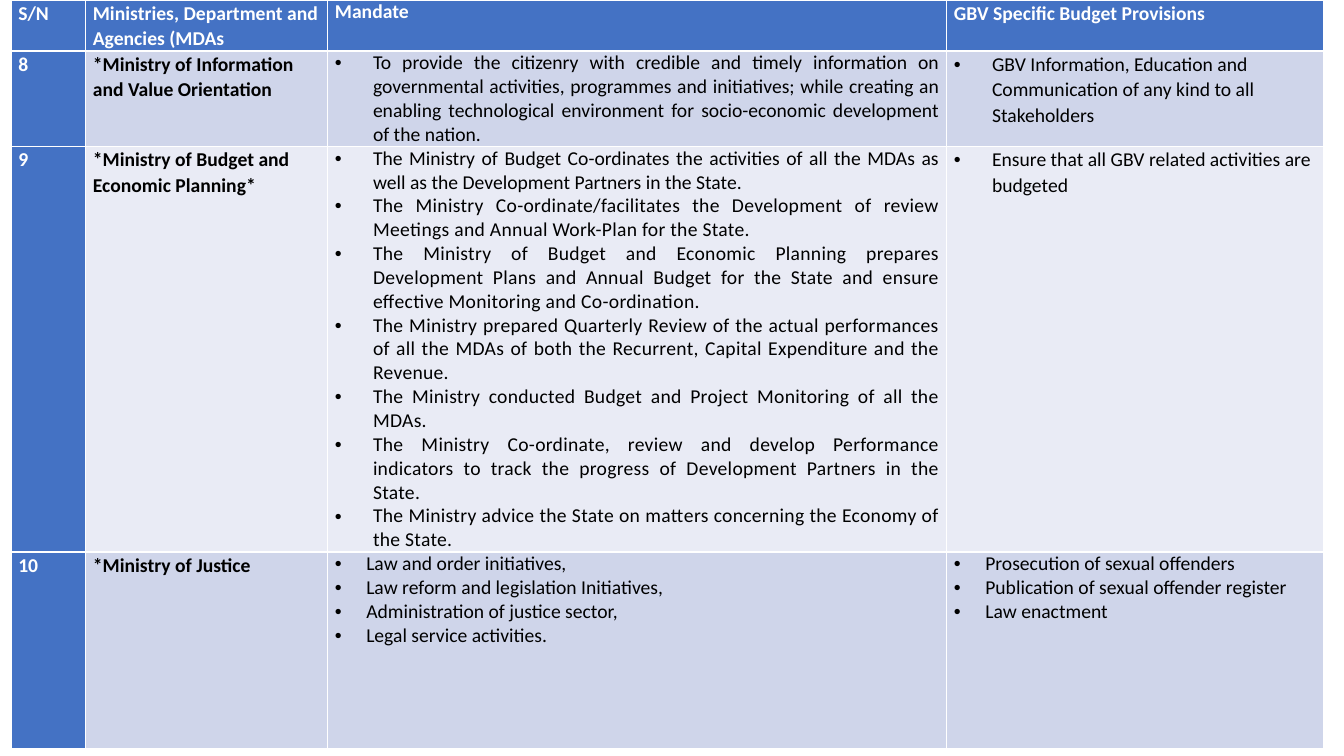
from lxml import etree
from pptx import Presentation
from pptx.dml.color import RGBColor
from pptx.enum.text import PP_ALIGN
from pptx.oxml.ns import qn
from pptx.util import Cm, Pt

JUSTIFY = PP_ALIGN.JUSTIFY
BLANK = 6
COLOURS = {"head": "4472C4", "odd": "CFD5EA", "even": "E9EBF5",
           "light": "FFFFFF", "dark": "000000"}
WIDTHS = [1.88, 6.1, 15.6, 9.5]
HEIGHTS = [0.99, 1.9, 8.08, 4.95]
MARGINS = {"margin_left": Cm(0.18), "margin_right": Cm(0.18),
           "margin_top": 0, "margin_bottom": 0}

# Paragraph formats
LOOSE = {"line_spacing": 1.07, "space_after": Pt(8)}
TIGHT = {}
JUST = {"alignment": JUSTIFY}

WIDE, SLIM = 0.96, 0.79  # bullet indents in cm

HEADS = ["S/N", "Ministries, Department and Agencies (MDAs", "Mandate",
         "GBV Specific Budget Provisions"]

# Each row: number, ministry, then (items, format, indent) for the two lists
ROWS = [
    ("8", "*Ministry of Information and Value Orientation",
     (["To provide the citizenry with credible and timely information on "
       "governmental activities, programmes and initiatives; while creating "
       "an enabling technological environment for socio-economic "
       "development of the nation."], JUST, WIDE),
     (["GBV Information, Education and Communication of any kind to all "
       "Stakeholders"], LOOSE, WIDE)),
    ("9", "*Ministry of Budget and Economic Planning*",
     (["The Ministry of Budget Co-ordinates the activities of all the MDAs "
       "as well as the Development Partners in the State.",
       "The Ministry Co-ordinate/facilitates the Development of review "
       "Meetings and Annual Work-Plan for the State.",
       "The Ministry of Budget and Economic Planning prepares Development "
       "Plans and Annual Budget for the State and ensure effective "
       "Monitoring and Co-ordination.",
       "The Ministry prepared Quarterly Review of the actual performances "
       "of all the MDAs of both the Recurrent, Capital Expenditure and the "
       "Revenue.",
       "The Ministry conducted Budget and Project Monitoring of all the "
       "MDAs.",
       "The Ministry Co-ordinate, review and develop Performance indicators "
       "to track the progress of Development Partners in the State.",
       "The Ministry advice the State on matters concerning the Economy of "
       "the State."], JUST, WIDE),
     (["Ensure that all GBV related activities are budgeted"], LOOSE, WIDE)),
    ("10", "*Ministry of Justice",
     (["Law and order initiatives,",
       "Law reform and legislation Initiatives,",
       "Administration of justice sector,",
       "Legal service activities."], TIGHT, SLIM),
     (["Prosecution of sexual offenders",
       "Publication of sexual offender register",
       "Law enactment"], TIGHT, SLIM)),
]


def colour(name):
    return RGBColor.from_string(COLOURS[name])


def apply(target, values):
    for name, value in values.items():
        setattr(target, name, value)


def add_bullet(para, indent):
    props = para._p.get_or_add_pPr()
    props.set("marL", str(Cm(indent)))
    props.set("indent", str(-Cm(indent)))
    etree.SubElement(props, qn("a:buFont")).set("typeface", "Arial")
    etree.SubElement(props, qn("a:buChar")).set("char", "•")


def write(para, text, ink, bold, style):
    apply(para, style)
    run = para.add_run()
    run.text = text
    apply(run.font, {"name": "Calibri", "size": Pt(14), "bold": bold})
    run.font.color.rgb = colour(ink)
    return run


def shade(cell, fill):
    apply(cell, MARGINS)
    cell.fill.solid()
    cell.fill.fore_color.rgb = colour(fill)


def fill_label(cell, text, fill, ink, style=LOOSE):
    shade(cell, fill)
    write(cell.text_frame.paragraphs[0], text, ink, True, style)


def fill_list(cell, items, style, indent, fill):
    """Write a bulleted list; later justified items are slightly spaced out."""
    shade(cell, fill)
    frame = cell.text_frame
    for i, item in enumerate(items):
        para = frame.add_paragraph() if i else frame.paragraphs[0]
        run = write(para, item, "dark", False, style)
        add_bullet(para, indent)
        if i and style is JUST:
            run._r.get_or_add_rPr().set("spc", "20")


def add_grid(slide):
    table = slide.shapes.add_table(
        len(HEIGHTS), len(WIDTHS), Cm(0.28), 0,
        Cm(sum(WIDTHS)), Cm(sum(HEIGHTS))).table
    table.first_col = True
    for col, width in zip(table.columns, WIDTHS):
        col.width = Cm(width)
    for row, height in zip(table.rows, HEIGHTS):
        row.height = Cm(height)
    return table


def main():
    deck = Presentation()
    deck.slide_width, deck.slide_height = Cm(33.87), Cm(19.05)
    slide = deck.slides.add_slide(deck.slide_layouts[BLANK])
    table = add_grid(slide)
    for c, head in enumerate(HEADS):
        style = JUST if head == "Mandate" else LOOSE
        fill_label(table.cell(0, c), head, "head", "light", style)
    for r, (number, name, *lists) in enumerate(ROWS, 1):
        band = "odd" if r % 2 else "even"
        fill_label(table.cell(r, 0), number, "head", "light")
        fill_label(table.cell(r, 1), name, band, "dark")
        for c, (items, style, indent) in enumerate(lists, 2):
            fill_list(table.cell(r, c), items, style, indent, band)
    deck.save("out.pptx")


if __name__ == "__main__":
    main()
